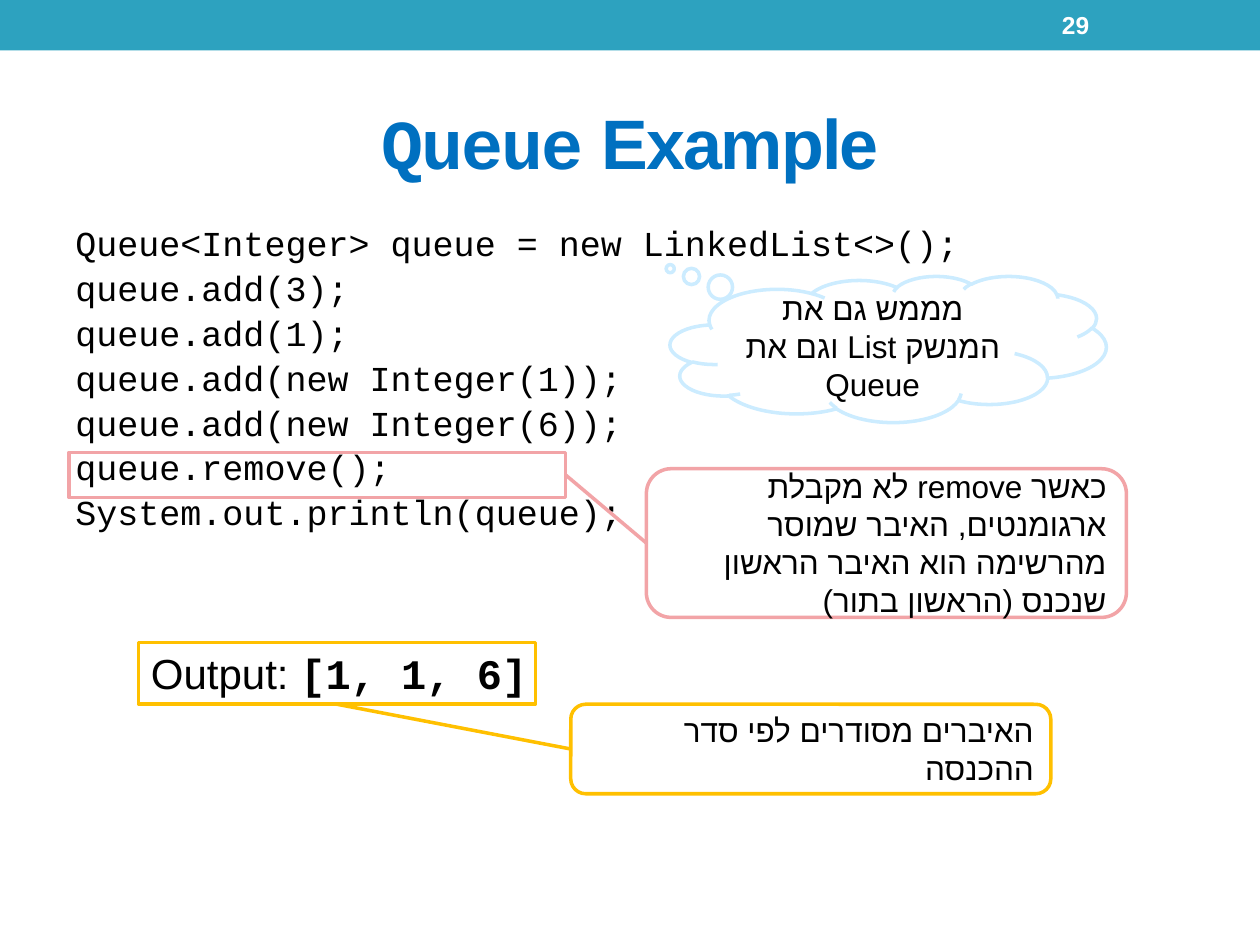
from lxml import etree
from pptx import Presentation
from pptx import util as u
from pptx.dml.color import RGBColor
from pptx.enum import shapes, text
from pptx.oxml.ns import qn

COLORS = {"bar": "2DA2BF", "title": "0070C0", "ink": "000000", "page": "FFFFFF",
          "remove": "F2A4A7", "cloud": "CCECFF", "output": "FFC000"}
SANS, MONO = "Arial", "Courier New"
WIDTH, HEIGHT = u.Inches(10), u.Inches(7.5)
KIND, ALIGN = shapes.MSO_SHAPE, text.PP_ALIGN

CODE = [
    "Queue<Integer> queue = new LinkedList<>();",
    "queue.add(3);",
    "queue.add(1);",
    "queue.add(new Integer(1));",
    "queue.add(new Integer(6));",
    "queue.remove();",
    "System.out.println(queue);",
]
TITLE = [("Queue", MONO, True), (" Example", SANS, True)]
NUMBER = [("29", SANS, True)]
OUTPUT = [("Output: ", SANS, False), ("[1, 1, 6]", MONO, True)]
REMOVE_NOTE = "כאשר remove לא מקבלת ארגומנטים, האיבר שמוסר מהרשימה הוא האיבר הראשון שנכנס (הראשון בתור)"
CLOUD_NOTE = "מממש גם את המנשק List וגם את Queue"
ORDER_NOTE = "האיברים מסודרים לפי סדר ההכנסה"

AREAS = {
    "bar": (0, 0, 100, 5.33),
    "code": (5, 23.33, 90, 71.07),
    "title": (5, 7.73, 90, 14.4),
    "number": (83.3, 0.27, 11.7, 4.8),
    "output": (11, 67.87, 39.4, 6.67),
    "remove_line": (5.5, 47.87, 39.4, 4.8),
    "remove_note": (51.3, 49.6, 38.1, 15.73),
    "cloud_note": (53.2, 29.2, 34.6, 15.47),
    "order_note": (45.3, 74.53, 38.1, 9.47),
    "output_frame": (11, 68, 31.5, 6.53),
}


def area(name):
    left, top, width, height = AREAS[name]
    return [int(share * side / 100) for share, side in
            ((left, WIDTH), (top, HEIGHT), (width, WIDTH), (height, HEIGHT))]


def rgb(color):
    return RGBColor.from_string(COLORS[color])


def write(paragraph, runs, size, color, align=ALIGN.LEFT, rtl=False, spacing=0):
    paragraph.alignment = align
    if rtl:
        paragraph._p.get_or_add_pPr().set("rtl", "1")
    for words, font, bold in runs:
        run = paragraph.add_run()
        run.text = words
        run.font.name, run.font.size, run.font.bold = font, u.Pt(size), bold
        run.font.color.rgb = rgb(color)
        props = run._r.get_or_add_rPr()
        etree.SubElement(props, qn("a:cs")).set("typeface", font)
        if spacing:
            props.set("spc", str(spacing * 100))


def space_before(paragraph, percent):
    before = etree.SubElement(paragraph._p.get_or_add_pPr(), qn("a:spcBef"))
    etree.SubElement(before, qn("a:spcPct")).set("val", str(percent * 1000))


def text_area(slide, name, anchor=text.MSO_ANCHOR.TOP):
    frame = slide.shapes.add_textbox(*area(name)).text_frame
    frame.word_wrap = True
    frame.vertical_anchor = anchor
    return frame


def outline(slide, name, kind, color, words="", align=ALIGN.RIGHT):
    shape = slide.shapes.add_shape(kind, *area(name))
    shape.shadow.inherit = False
    shape.fill.background()
    shape.line.color.rgb, shape.line.width = rgb(color), u.Pt(2)
    if words:
        frame = shape.text_frame
        frame.word_wrap = True
        frame.vertical_anchor = text.MSO_ANCHOR.MIDDLE
        write(frame.paragraphs[0], [(words, SANS, False)], 18, "ink", align, rtl=True)
    return shape


def connect(slide, source, source_site, note, color):
    line = slide.shapes.add_connector(shapes.MSO_CONNECTOR.STRAIGHT, 0, 0, 0, 0)
    line.begin_connect(source, source_site)
    line.end_connect(note, 1)
    line.line.color.rgb, line.line.width = rgb(color), u.Pt(2)
    etree.SubElement(line._element.spPr, qn("a:effectLst"))


def main():
    deck = Presentation()
    deck.slide_width, deck.slide_height = WIDTH, HEIGHT
    slide = deck.slides.add_slide(deck.slide_layouts[6])

    bar = slide.shapes.add_shape(KIND.RECTANGLE, *area("bar"))
    bar.shadow.inherit = False
    bar.fill.solid()
    bar.fill.fore_color.rgb = rgb("bar")
    bar.line.fill.background()

    code = text_area(slide, "code")
    for number, line in enumerate(CODE):
        paragraph = code.add_paragraph() if number else code.paragraphs[0]
        write(paragraph, [(line, MONO, False)], 20, "ink")
        paragraph.line_spacing = 0.9
        space_before(paragraph, 20)
        props = paragraph._p.get_or_add_pPr()
        props.set("marL", str(u.Inches(0.2)))
        props.set("indent", str(u.Inches(-0.2)))

    middle = text.MSO_ANCHOR.MIDDLE
    write(text_area(slide, "title", middle).paragraphs[0], TITLE, 40, "title",
          ALIGN.CENTER, spacing=-1)
    write(text_area(slide, "number", middle).paragraphs[0], NUMBER, 14, "page")
    output = text_area(slide, "output").paragraphs[0]
    write(output, OUTPUT, 24, "ink")
    space_before(output, 50)

    remove_line = outline(slide, "remove_line", KIND.RECTANGLE, "remove")
    remove_note = outline(slide, "remove_note", KIND.ROUNDED_RECTANGLE, "remove", REMOVE_NOTE)
    connect(slide, remove_line, 3, remove_note, "remove")

    cloud = outline(slide, "cloud_note", KIND.CLOUD_CALLOUT, "cloud", CLOUD_NOTE, ALIGN.CENTER)
    cloud.adjustments[0], cloud.adjustments[1] = -0.5, -0.55

    order_note = outline(slide, "order_note", KIND.ROUNDED_RECTANGLE, "output", ORDER_NOTE)
    output_frame = outline(slide, "output_frame", KIND.RECTANGLE, "output")
    connect(slide, output_frame, 2, order_note, "output")

    deck.save("out.pptx")


if __name__ == "__main__":
    main()
